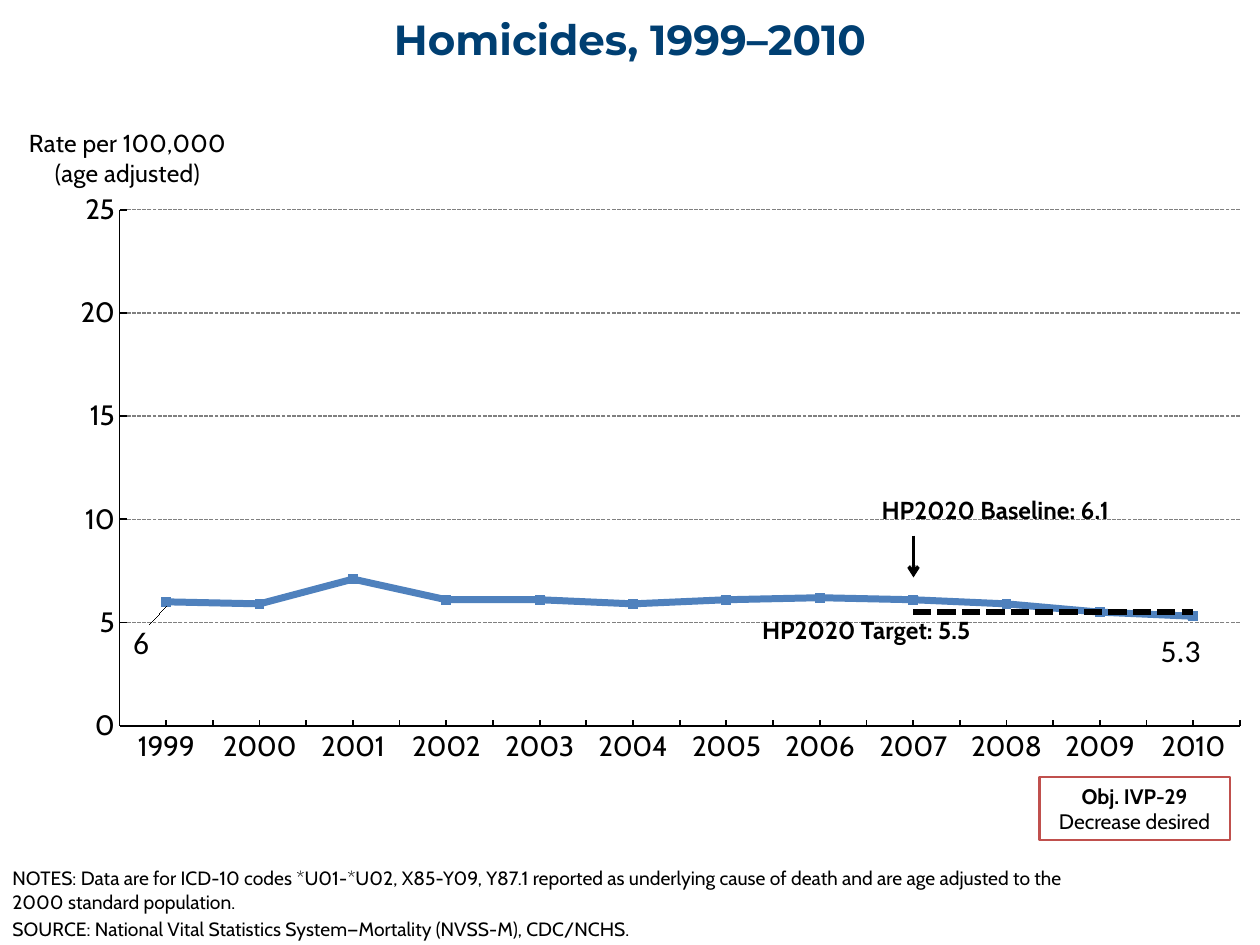
import pptx
import pptx.chart.data
import pptx.dml.color
import pptx.enum.chart
import pptx.enum.dml
import pptx.enum.shapes
import pptx.enum.text
import pptx.oxml
import pptx.oxml.ns
import pptx.util

Pt = pptx.util.Pt
RGBColor = pptx.dml.color.RGBColor
Dash = pptx.enum.dml.MSO_LINE
Tick = pptx.enum.chart.XL_TICK_MARK
Align = pptx.enum.text.PP_ALIGN
Anchor = pptx.enum.text.MSO_ANCHOR

NAVY = RGBColor(0x00, 0x3F, 0x72)
BLUE = RGBColor(0x4F, 0x81, 0xBD)
RED = RGBColor(0xC0, 0x50, 0x4D)
GRAY = RGBColor(0x80, 0x80, 0x80)
BLACK = RGBColor(0, 0, 0)

YEARS = [str(year) for year in range(1999, 2011)]
RATES = [6, 5.9, 7.1, 6.1, 6.1, 5.9, 6.1, 6.2, 6.1, 5.9, 5.5, 5.3]
TARGET = 5.5
TARGET_START = YEARS.index("2007")


def style_font(font, size, color=BLACK, bold=False, name="Cabin"):
    font.name = name
    font.size = Pt(size)
    font.bold = bold
    font.color.rgb = color


def style_line(line, color, width, dash=None):
    line.color.rgb = color
    line.width = Pt(width)
    if dash is not None:
        line.dash_style = dash


def manual_layout(x, y, w=None, h=None, edge=True):
    """Chart layout in fractions of the chart: an inner plot area if sized,
    a shift from the default place if not measured from the edge."""
    target = sizes = modes = ""
    if w is not None:
        target = '<c:layoutTarget val="inner"/>'
        sizes = f'<c:w val="{w}"/><c:h val="{h}"/>'
    if edge:
        modes = '<c:xMode val="edge"/><c:yMode val="edge"/>'
    return pptx.oxml.parse_xml(
        f'<c:layout {pptx.oxml.ns.nsdecls("c")}><c:manualLayout>{target}{modes}'
        f'<c:x val="{x}"/><c:y val="{y}"/>{sizes}</c:manualLayout></c:layout>')


def replace_layout(parent, layout, after=None):
    """Put the layout first in its parent, or right after the named child."""
    for old in parent.findall(pptx.oxml.ns.qn("c:layout")):
        parent.remove(old)
    if after is None:
        parent.insert(0, layout)
    else:
        parent.find(pptx.oxml.ns.qn(after)).addnext(layout)


def label_point(series, index, dx, dy):
    """Show a point's value below it, shifted by fractions of the chart."""
    label = series.points[index].data_label
    label.position = pptx.enum.chart.XL_LABEL_POSITION.BELOW
    style_font(label.font, 18, name="Calibri")
    element = series._element.xpath(f"c:dLbls/c:dLbl[c:idx/@val='{index}']")[0]
    replace_layout(element, manual_layout(dx, dy, edge=False), after="c:idx")


def style_axes(chart):
    rate_axis, year_axis = chart.value_axis, chart.category_axis
    for axis in (rate_axis, year_axis):
        style_font(axis.tick_labels.font, 16)
        style_line(axis.format.line, BLACK, 1)
    year_axis.major_tick_mark = Tick.NONE
    year_axis.minor_tick_mark = Tick.INSIDE
    rate_axis.major_tick_mark = Tick.INSIDE
    rate_axis.minor_tick_mark = Tick.NONE
    rate_axis.minimum_scale, rate_axis.maximum_scale = 0, 25
    rate_axis.major_unit = 5
    rate_axis.tick_labels.number_format = "0"
    rate_axis.tick_labels.number_format_is_linked = False
    style_line(rate_axis.major_gridlines.format.line, GRAY, 0.75, Dash.SQUARE_DOT)

    title = rate_axis.axis_title
    title.text_frame.text = "Rate per 100,000\n(age adjusted)"
    for paragraph in title.text_frame.paragraphs:
        paragraph.alignment = Align.CENTER
        style_font(paragraph.runs[0].font, 14)
    body = title.text_frame._txBody.find(pptx.oxml.ns.qn("a:bodyPr"))
    body.set("rot", "0")
    body.set("vert", "horz")
    replace_layout(title._element, manual_layout(0.02, 0.01), after="c:tx")


def add_rate_chart(slide, left, top, width, height):
    data = pptx.chart.data.CategoryChartData()
    data.categories = YEARS
    data.add_series("Series 1", RATES)
    data.add_series("Series 2", [TARGET if i >= TARGET_START else None
                                 for i in range(len(YEARS))])
    chart = slide.shapes.add_chart(
        pptx.enum.chart.XL_CHART_TYPE.LINE_MARKERS,
        Pt(left), Pt(top), Pt(width), Pt(height), data).chart
    chart.has_legend = False
    chart.has_title = False
    style_font(chart.font, 18, name="Calibri")
    style_axes(chart)
    replace_layout(chart._chartSpace.chart.plotArea,
                   manual_layout(0.095, 0.14, 0.89, 0.77))

    rates, target = chart.plots[0].series
    rates.smooth = target.smooth = False
    style_line(rates.format.line, BLUE, 4)
    rates.marker.style = pptx.enum.chart.XL_MARKER_STYLE.SQUARE
    rates.marker.size = 5
    rates.marker.format.fill.solid()
    rates.marker.format.fill.fore_color.rgb = BLUE
    rates.marker.format.line.color.rgb = BLUE
    style_line(target.format.line, BLACK, 3.5, Dash.SQUARE_DOT)
    target.marker.style = pptx.enum.chart.XL_MARKER_STYLE.NONE
    label_point(rates, 0, -0.02, 0.02)
    label_point(rates, len(RATES) - 1, -0.01, 0.01)


def add_text(slide, left, top, width, height, lines, size, color=BLACK,
             bold=False, align=Align.CENTER, anchor=Anchor.TOP, gap=0, font="Cabin"):
    box = slide.shapes.add_textbox(Pt(left), Pt(top), Pt(width), Pt(height))
    frame = box.text_frame
    frame.word_wrap = True
    frame.vertical_anchor = anchor
    frame.text = "\n".join(lines)
    for index, paragraph in enumerate(frame.paragraphs):
        paragraph.alignment = align
        if index:
            paragraph.space_before = Pt(gap)
        style_font(paragraph.runs[0].font, size, color, bold, font)


def add_baseline_arrow(slide, x, top, bottom):
    arrow = slide.shapes.add_connector(
        pptx.enum.shapes.MSO_CONNECTOR.STRAIGHT, Pt(x), Pt(top), Pt(x), Pt(bottom))
    style_line(arrow.line, BLACK, 2)
    namespace = pptx.oxml.ns.nsdecls("a")
    arrow.line._get_or_add_ln().append(
        pptx.oxml.parse_xml(f'<a:tailEnd {namespace} type="arrow"/>'))
    arrow._element.spPr.append(pptx.oxml.parse_xml(f"<a:effectLst {namespace}/>"))


def add_objective_box(slide, left, top, width, height):
    objective = slide.shapes.add_shape(
        pptx.enum.shapes.MSO_SHAPE.RECTANGLE, Pt(left), Pt(top), Pt(width), Pt(height))
    objective.shadow.inherit = False
    objective.fill.background()
    style_line(objective.line, RED, 1.25)
    frame = objective.text_frame
    frame.word_wrap = True
    frame.vertical_anchor = Anchor.MIDDLE
    frame.text = "Obj. IVP-29\nDecrease desired"
    for paragraph, bold in zip(frame.paragraphs, (True, False)):
        paragraph.alignment = Align.CENTER
        style_font(paragraph.runs[0].font, 12, bold=bold)


def main():
    deck = pptx.Presentation()
    deck.slide_width, deck.slide_height = Pt(720), Pt(540)
    slide = deck.slides.add_slide(deck.slide_layouts[6])
    add_rate_chart(slide, 0, 66.24, 719.28, 383)
    add_text(slide, 0, 0, 720, 44.64, ["Homicides, 1999–2010"], 24, NAVY, True,
             anchor=Anchor.MIDDLE, font="Montserrat")
    add_text(slide, 0, 491.76, 624.24, 44, [
        "NOTES: Data are for ICD-10 codes *U01-*U02, X85-Y09, Y87.1 reported as "
        "underlying cause of death and are age adjusted to the 2000 standard population.",
        "SOURCE: National Vital Statistics System—Mortality (NVSS-M), CDC/NCHS.",
    ], 11, align=Align.LEFT, gap=2.2)
    add_text(slide, 396, 347.76, 198, 24.5, ["HP2020 Target: 5.5"], 14, bold=True)
    add_baseline_arrow(slide, 522, 306, 330)
    add_text(slide, 457.92, 279.36, 221.76, 24.5, ["HP2020 Baseline: 6.1"], 14, bold=True)
    add_objective_box(slide, 594, 444.24, 108.72, 36)
    deck.save("out.pptx")


if __name__ == "__main__":
    main()
